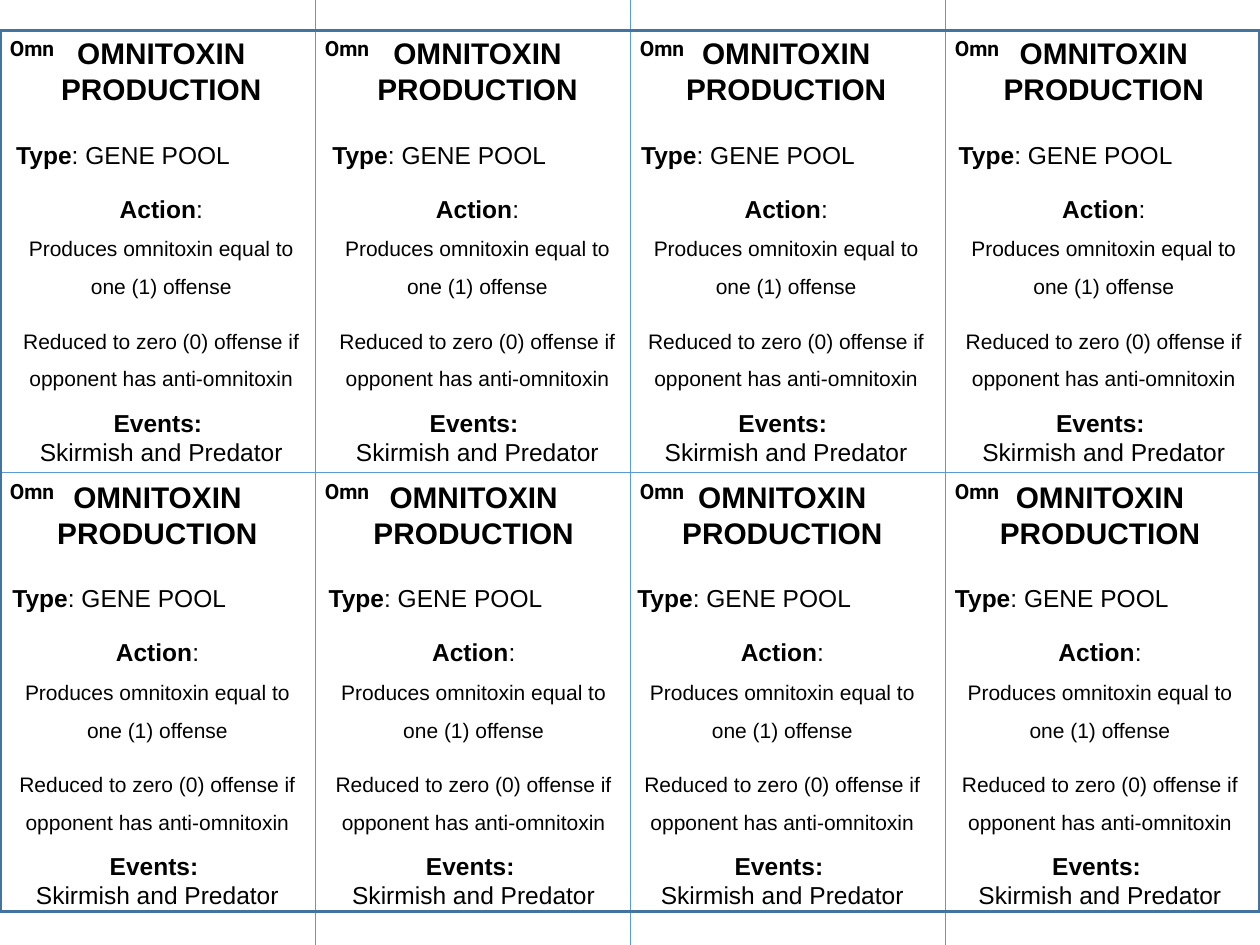
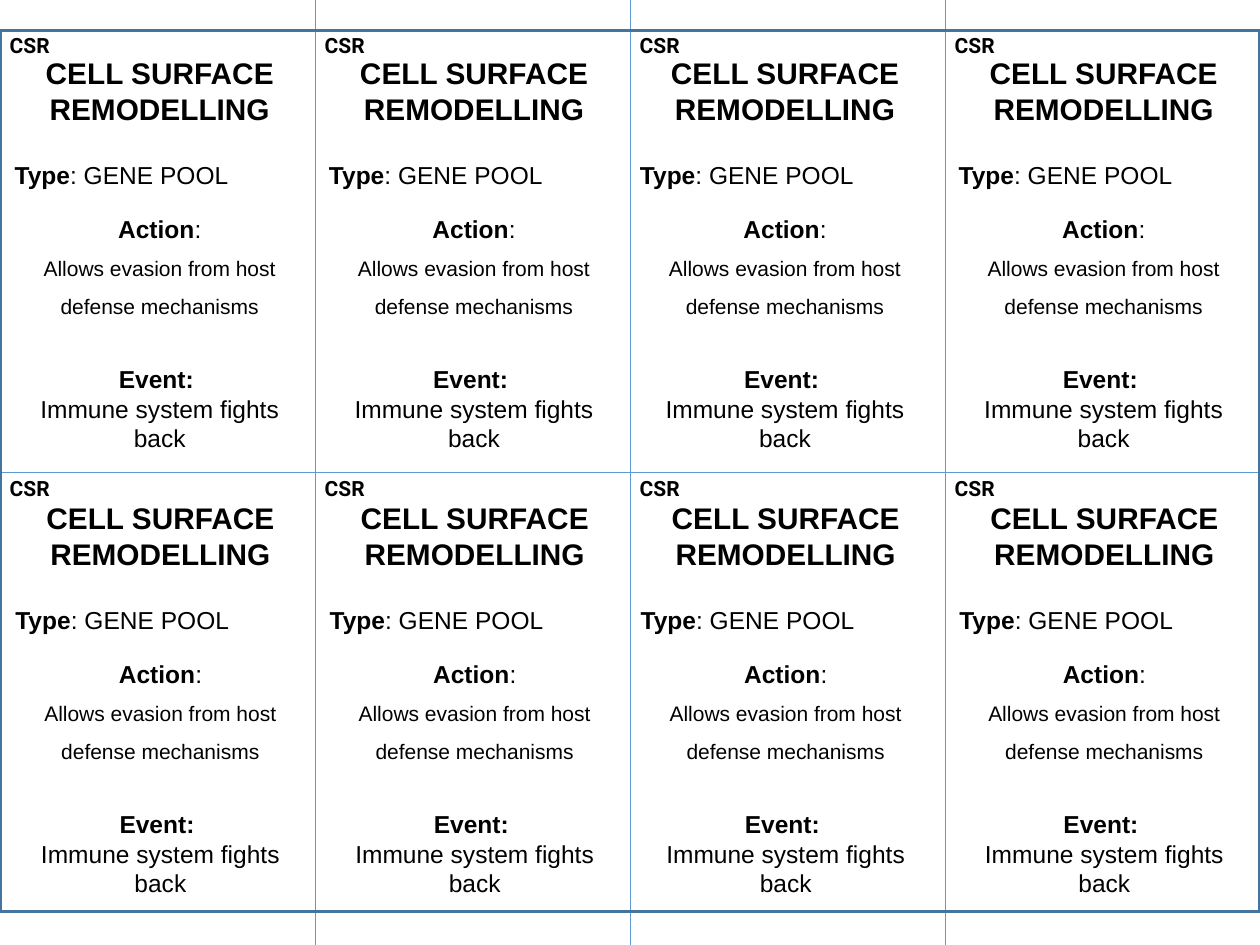
from pptx import Presentation
from pptx import util as u
from pptx.dml.color import RGBColor
from pptx.enum import shapes, text
from lxml import etree

Pt = u.Pt

# Content: each paragraph is (runs, size, centred, line spacing, space before);
# each run is (words, bold)
TYPE_AND_ACTION = [
    ([("Type", True), (": GENE POOL", False)], 14, False, 1.5, 10.5),
    ([("Action", True), (":", False)], 14, True, 1, 14.2),
]
SLIDES = [
    dict(
        label="Omn", label_width=42.5, label_tops=(16.6, 270),
        card_tops=(16.6, 270), card_height=257,
        card_nudges=(2.2, 2.9, -0.7, 0.8), row_shift=-2.2,
        card=[
            ([("OMNITOXIN", True)], 17, True, 1, 0),
            ([("PRODUCTION", True)], 17, True, 1, 0),
            *TYPE_AND_ACTION,
            ([("Produces omnitoxin equal to one (1) offense", False)], 12, True, 1.5, 0),
            ([("Reduced to zero (0) offense if opponent has anti-omnitoxin", False)],
             12, True, 1.5, 9.4),
            ([("Events: ", True)], 14, True, 1, 9.4),
            ([("Skirmish and Predator", False)], 14, True, 1, 0),
        ]),
    dict(
        label="CSR", label_width=40.3, label_tops=(15, 268),
        card_tops=(28, 282.3), card_height=237.6,
        card_nudges=(1.3, 0.9, -1.4, 0.7), row_shift=0.4,
        card=[
            ([("CELL SURFACE REMODELLING", True)], 17, True, 1, 0),
            *TYPE_AND_ACTION,
            ([("Allows evasion from host defense mechanisms", False)], 12, True, 1.5, 0),
            ([("Event: ", True)], 14, True, 1, 26),
            ([("Immune system fights back", False)], 14, True, 1, 0),
        ]),
]

# Shared look and grid
WIDTH, HEIGHT = 720, 540
COLS, ROWS = 4, 2
CARD_W, CARD_H = WIDTH / COLS, HEIGHT / ROWS
LABEL_NUDGE = -1.5
GRID, FRAME_LINE, INK = "5B9BD5", "43739E", "000000"
CARD_FONT, LABEL_FONT = "Arial", "Roboto"
A_NS = "http://schemas.openxmlformats.org/drawingml/2006/main"


def color(hex_code):
    return RGBColor.from_string(hex_code)


def add_grid(s):
    """Cutting lines between the cards, in one group."""
    grid = s.shapes.add_group_shape()
    lines = [(c * CARD_W, 0, c * CARD_W, HEIGHT) for c in range(1, COLS)]
    lines += [(0, r * CARD_H, WIDTH, r * CARD_H) for r in range(1, ROWS)]
    for ends in lines:
        cx = grid.shapes.add_connector(shapes.MSO_CONNECTOR.STRAIGHT, *map(Pt, ends))
        cx.line.color.rgb = color(GRID)
        cx.line.width = Pt(0.5)
        etree.SubElement(cx._element.spPr, f"{{{A_NS}}}effectLst")


def add_frame(s):
    sp = s.shapes.add_shape(shapes.MSO_SHAPE.FRAME, 0, Pt(17.3), Pt(WIDTH), Pt(504))
    sp.adjustments[0] = 0.001
    sp.shadow.inherit = False
    sp.fill.solid()
    sp.fill.fore_color.rgb = color(GRID)
    sp.line.color.rgb = color(FRAME_LINE)
    sp.line.width = Pt(1)


def add_text(s, box, paragraphs, font, wrap=True):
    tf = s.shapes.add_textbox(*map(Pt, box)).text_frame
    tf.word_wrap = wrap
    tf.auto_size = text.MSO_AUTO_SIZE.SHAPE_TO_FIT_TEXT
    for i, (runs, size, centred, spacing, before) in enumerate(paragraphs):
        p = tf.add_paragraph() if i else tf.paragraphs[0]
        p.alignment = text.PP_ALIGN.CENTER if centred else text.PP_ALIGN.LEFT
        p.line_spacing = float(spacing)
        p.space_before = Pt(before)
        p.font.name, p.font.size = font, Pt(size)
        p.font.color.rgb = color(INK)
        for words, bold in runs:
            r = p.add_run()
            r.text = words
            r.font.name, r.font.size, r.font.bold = font, Pt(size), bold
            r.font.color.rgb = color(INK)


def build_slide(prs, d):
    s = prs.slides.add_slide(prs.slide_layouts[6])
    add_grid(s)
    add_frame(s)
    label = [([(d["label"], True)], 12, False, 1, 0)]
    for row in range(ROWS):
        for col in range(COLS):
            x = col * CARD_W
            card_x = x + d["card_nudges"][col] + row * d["row_shift"]
            add_text(s, (card_x, d["card_tops"][row], CARD_W, d["card_height"]),
                     d["card"], CARD_FONT)
            add_text(s, (x + LABEL_NUDGE, d["label_tops"][row], d["label_width"], 21.6),
                     label, LABEL_FONT, wrap=False)


def main():
    prs = Presentation()
    prs.slide_width, prs.slide_height = Pt(WIDTH), Pt(HEIGHT)
    for d in SLIDES:
        build_slide(prs, d)
    prs.save("out.pptx")


if __name__ == "__main__":
    main()
